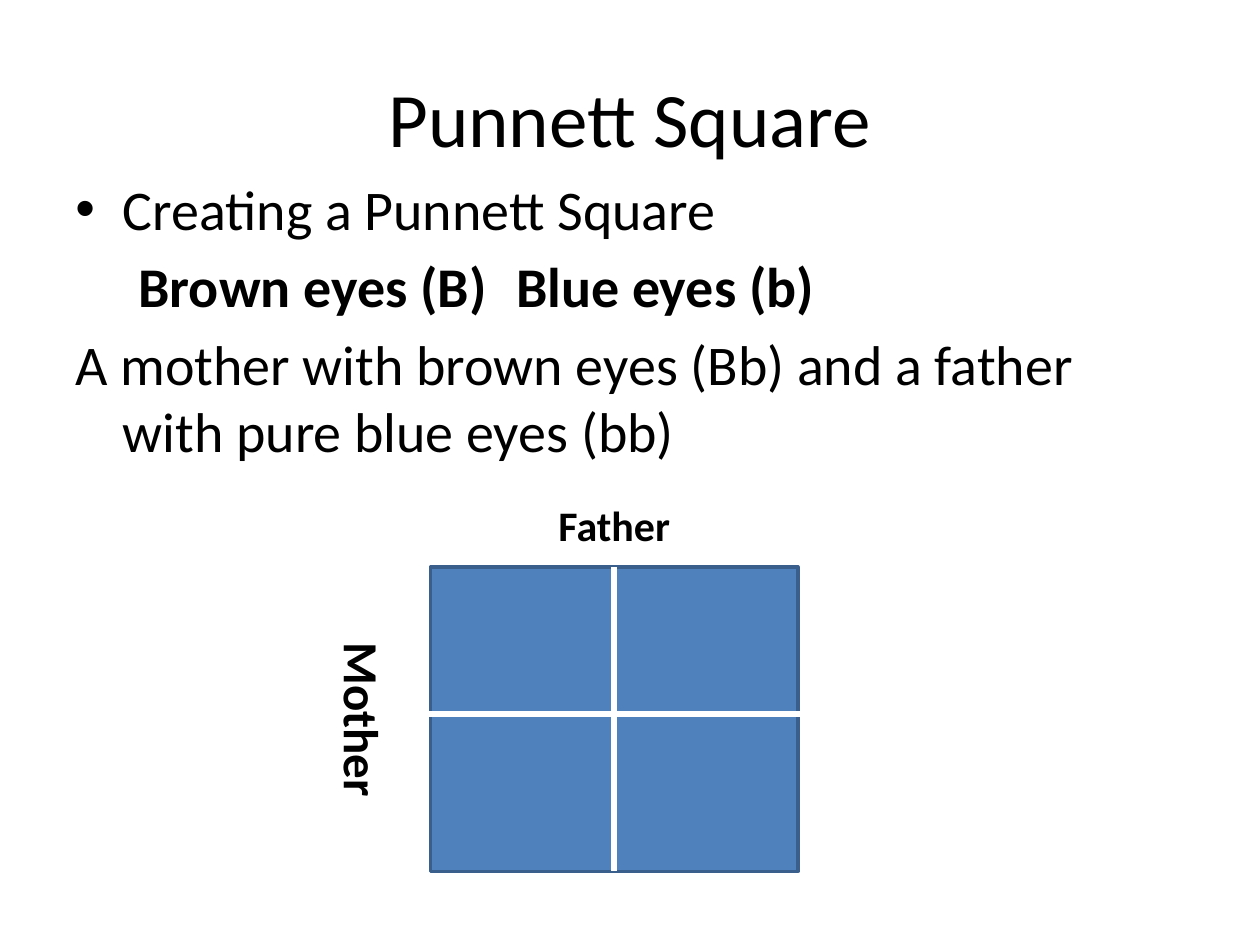
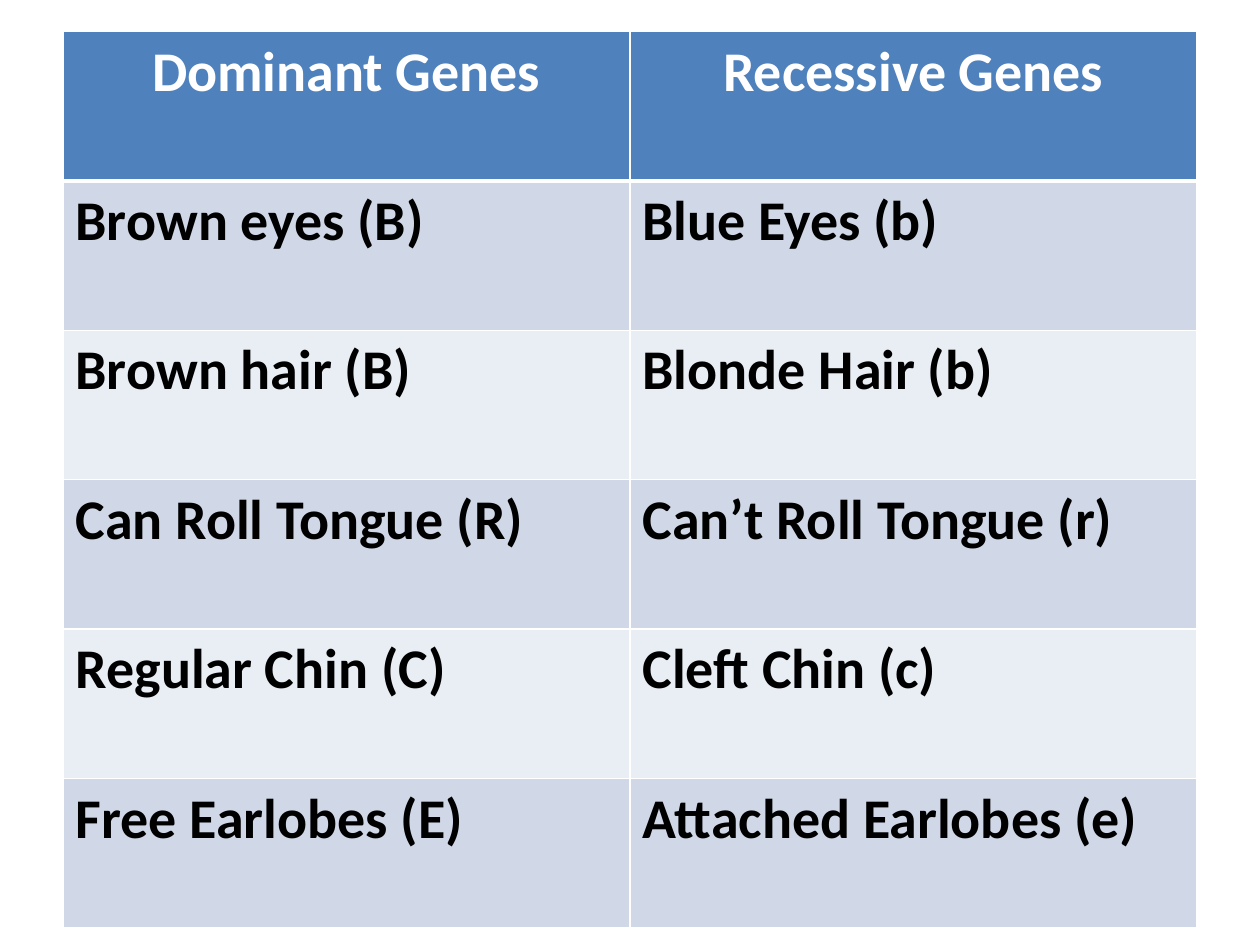
from dataclasses import dataclass

from lxml.etree import SubElement
from pptx import Presentation
from pptx.dml.color import RGBColor
from pptx.enum.shapes import MSO_CONNECTOR, MSO_SHAPE
from pptx.enum.text import MSO_ANCHOR, PP_ALIGN
from pptx.oxml.ns import qn
from pptx.util import Inches, Pt


@dataclass(frozen=True)
class Theme:
    font: str = "Calibri"
    ink: str = "000000"
    paper: str = "FFFFFF"
    accent: str = "4F81BD"
    accent_edge: str = "3A5F8C"
    bands: tuple = ("D0D8E8", "E9EDF4")
    title_size: float = 44
    body_size: float = 32
    side_label_size: float = 28
    top_label_size: float = 24
    body_gap: float = 6
    edge_width: float = 2
    divider_width: float = 3.25
    header_rule: float = 3
    cell_rule: float = 1


class Deck:
    """Draws on the current slide; lengths count cells of a 120 by 90 grid."""

    COLUMNS, ROWS = 120, 90

    def __init__(self, theme):
        self.theme = theme
        self.presentation = Presentation()
        self.presentation.slide_width = Inches(10)
        self.presentation.slide_height = Inches(7.5)
        self.slide = None

    def add_slide(self):
        self.slide = self.presentation.slides.add_slide(self.presentation.slide_layouts[6])

    def x(self, columns):
        return round(self.presentation.slide_width * columns / self.COLUMNS)

    def y(self, rows):
        return round(self.presentation.slide_height * rows / self.ROWS)

    def box(self, left, top, width, height):
        return self.x(left), self.y(top), self.x(width), self.y(height)

    def style(self, paragraph, size, bold=False, color=None, align=PP_ALIGN.LEFT):
        paragraph.alignment = align
        font = paragraph.font
        font.name, font.size, font.bold = self.theme.font, Pt(size), bold
        font.color.rgb = RGBColor.from_string(color or self.theme.ink)

    def text(self, area, content, size, bold=False, align=PP_ALIGN.LEFT,
             anchor=MSO_ANCHOR.TOP, direction=None):
        shape = self.slide.shapes.add_textbox(*self.box(*area))
        frame = shape.text_frame
        frame.word_wrap = True
        frame.vertical_anchor = anchor
        frame.text = content
        for paragraph in frame.paragraphs:
            self.style(paragraph, size, bold, align=align)
        if direction:
            shape.element.txBody.bodyPr.set("vert", direction)
        return frame

    def title(self, content):
        self.text((6, 3.6, 108, 15), content, self.theme.title_size,
                  align=PP_ALIGN.CENTER, anchor=MSO_ANCHOR.MIDDLE)

    def indent(self, paragraph, hanging=4.5, bullet=None, tab_stops=()):
        properties = paragraph._p.get_or_add_pPr()
        properties.set("marL", str(self.x(hanging)))
        properties.set("indent", str(-self.x(hanging)))
        if bullet:
            SubElement(properties, qn("a:buFont"), typeface="Arial")
            SubElement(properties, qn("a:buChar"), char=bullet)
        else:
            SubElement(properties, qn("a:buNone"))
        if tab_stops:
            tabs = SubElement(properties, qn("a:tabLst"))
            for stop in tab_stops:
                SubElement(tabs, qn("a:tab"), pos=str(self.x(stop)), algn="l")

    def rectangle(self, area):
        shape = self.slide.shapes.add_shape(MSO_SHAPE.RECTANGLE, *self.box(*area))
        shape.shadow.inherit = False
        shape.fill.solid()
        shape.fill.fore_color.rgb = RGBColor.from_string(self.theme.accent)
        shape.line.color.rgb = RGBColor.from_string(self.theme.accent_edge)
        shape.line.width = Pt(self.theme.edge_width)
        return shape

    def divider(self, start, end):
        line = self.slide.shapes.add_connector(
            MSO_CONNECTOR.STRAIGHT, self.x(start[0]), self.y(start[1]),
            self.x(end[0]), self.y(end[1]))
        line.line.color.rgb = RGBColor.from_string(self.theme.paper)
        line.line.width = Pt(self.theme.divider_width)
        SubElement(line.element.spPr, qn("a:effectLst"))
        return line

    def cell_borders(self, cell, top, bottom):
        properties = cell._tc.get_or_add_tcPr()
        rule = self.theme.cell_rule
        for side, width in zip("LRTB", (rule, rule, top, bottom)):
            line = SubElement(properties, qn(f"a:ln{side}"), w=str(Pt(width)))
            fill = SubElement(line, qn("a:solidFill"))
            SubElement(fill, qn("a:srgbClr"), val=self.theme.paper)

    def table(self, area, rows):
        """Fill a table whose first row is the header and whose other rows are banded."""
        theme = self.theme
        table = self.slide.shapes.add_table(len(rows), len(rows[0]), *self.box(*area)).table
        for row_index, row in enumerate(rows):
            header = row_index == 0
            fill = theme.accent if header else theme.bands[(row_index - 1) % 2]
            top = theme.header_rule if row_index == 1 else theme.cell_rule
            bottom = theme.header_rule if header else theme.cell_rule
            for column_index, content in enumerate(row):
                cell = table.cell(row_index, column_index)
                cell.text = content
                self.style(cell.text_frame.paragraphs[0], theme.body_size, True,
                           theme.paper if header else theme.ink,
                           PP_ALIGN.CENTER if header else PP_ALIGN.LEFT)
                self.cell_borders(cell, top, bottom)
                cell.fill.solid()
                cell.fill.fore_color.rgb = RGBColor.from_string(fill)


def punnett_square(deck):
    theme = deck.theme
    deck.add_slide()
    deck.title("Punnett Square")
    body = deck.text((6, 16, 108, 59.4), "\n".join((
        "Creating a Punnett Square",
        "\tBrown eyes (B)\tBlue eyes (b)",
        "A mother with brown eyes (Bb) and a father with pure blue eyes (bb)",
    )), theme.body_size)
    task, traits, parents = body.paragraphs
    for paragraph in body.paragraphs:
        paragraph.space_before = Pt(theme.body_gap)
    deck.indent(task, bullet="•")
    deck.indent(traits, hanging=0, tab_stops=(20.5, 59.7))
    traits.font.bold = True
    deck.indent(parents)

    left, top, width, height = square_area = (41, 54, 35, 29)
    square = deck.rectangle(square_area)
    middle = left + width / 2
    vertical = deck.divider((middle, top), (middle, top + height))
    vertical.begin_connect(square, 0)
    vertical.end_connect(square, 2)
    deck.divider((40, 68), (77.5, 68))
    deck.text((30, 60, 8, 20), "Mother", theme.side_label_size, bold=True, direction="eaVert")
    deck.text((52, 47, 26, 6), "Father", theme.top_label_size, bold=True)


def gene_table(deck):
    deck.add_slide()
    deck.table((6, 3, 108, 85.4), (
        ("Dominant Genes", "Recessive Genes"),
        ("Brown eyes (B)", "Blue Eyes (b)"),
        ("Brown hair (B)", "Blonde Hair (b)"),
        ("Can Roll Tongue (R)", "Can’t Roll Tongue (r)"),
        ("Regular Chin (C)", "Cleft Chin (c)"),
        ("Free Earlobes (E)", "Attached Earlobes (e)"),
    ))


def main():
    deck = Deck(Theme())
    punnett_square(deck)
    gene_table(deck)
    deck.presentation.save("out.pptx")


if __name__ == "__main__":
    main()
